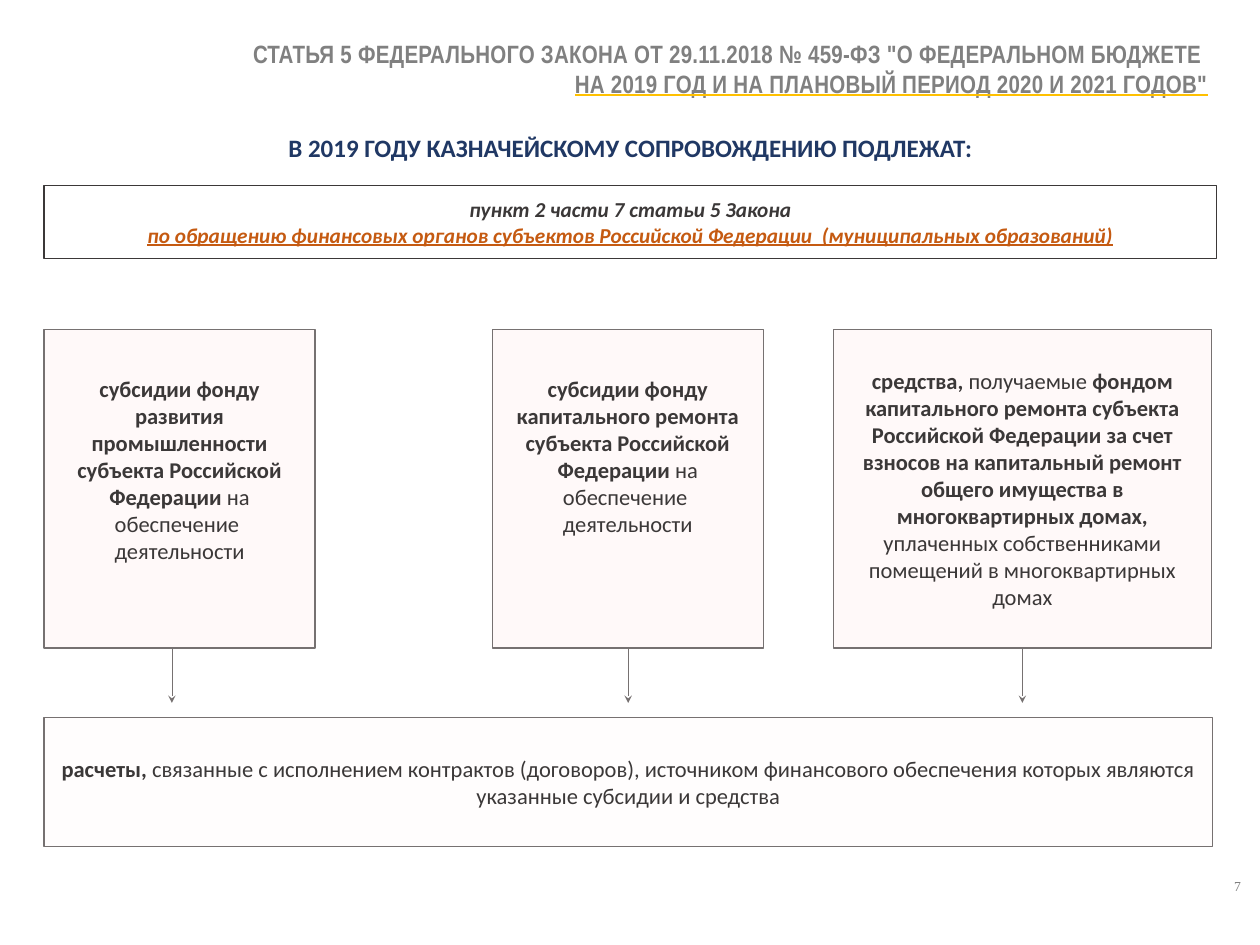
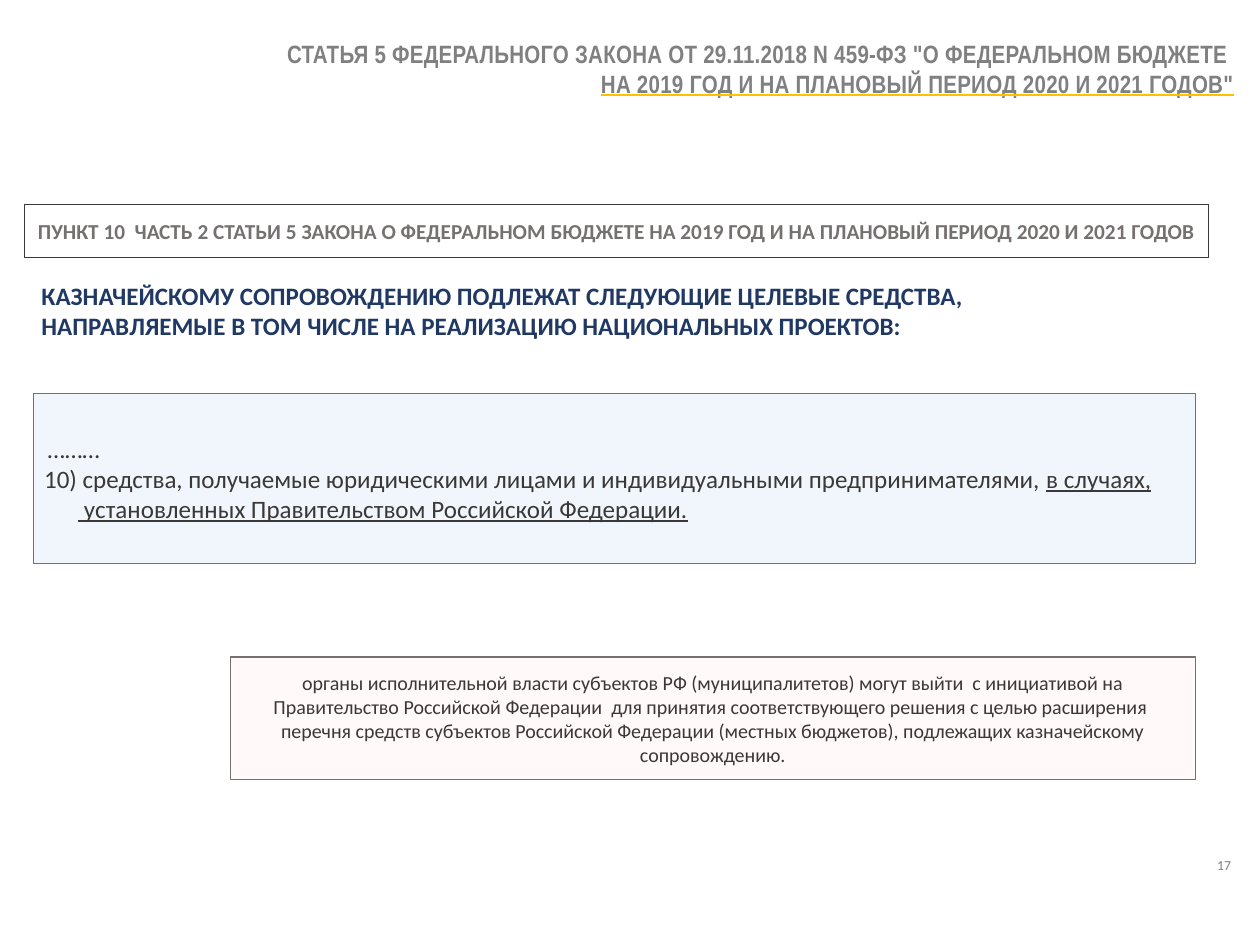
"""Builds two slides on treasury support under the federal budget law."""
import dataclasses

import pptx
import pptx.dml.color
import pptx.enum.shapes
import pptx.enum.text
import pptx.oxml
import pptx.oxml.ns
import pptx.util

ALIGN = pptx.enum.text.PP_ALIGN
ANCHOR = pptx.enum.text.MSO_ANCHOR
Inches = pptx.util.Inches


@dataclasses.dataclass(frozen=True)
class Theme:
    """Colours, fonts and type sizes of the deck."""
    body_font: str = "Calibri"
    title_font: str = "Arial Narrow"
    number_font: str = "Times New Roman"
    dark: str = "3B3838"
    border: str = "767171"
    grey: str = "808080"
    navy: str = "203864"
    orange: str = "C55A11"
    gold: str = "FFC000"
    white: tuple = ("FFFFFF", 92)
    rose: tuple = ("FFEFEF", 33)
    pale_rose: tuple = ("FFEFEF", 12)
    blue: tuple = ("DEEBF7", 44)
    heading: int = 20
    body: int = 18
    reference: int = 17
    note: int = 16
    number: int = 11


THEME = Theme()
SLIDE_WIDTH, SLIDE_HEIGHT = 14, 10.5
LEFT = 0.49
COLUMN_TOP, COLUMN_HEIGHT = 3.66, 3.54
ARROW_TOP, ARROW_BOTTOM = 7.21, 7.81

TITLE = ('СТАТЬЯ 5 ФЕДЕРАЛЬНОГО ЗАКОНА ОТ 29.11.2018 {sign} 459-ФЗ "О ФЕДЕРАЛЬНОМ БЮДЖЕТЕ ',
         'НА 2019 ГОД И НА ПЛАНОВЫЙ ПЕРИОД 2020 И 2021 ГОДОВ"')

SUPPORT_HEADING = "В 2019 ГОДУ КАЗНАЧЕЙСКОМУ СОПРОВОЖДЕНИЮ ПОДЛЕЖАТ:"
SUPPORT_REFERENCE = (
    "пункт 2 части 7 статьи 5 Закона",
    "по обращению финансовых органов субъектов Российской Федерации  (муниципальных образований)",
)
SUBSIDY_PURPOSE = ("на обеспечение  деятельности", "")
FUND_COLUMNS = [
    {"left": LEFT, "width": 3.01, "arrow": 1.91, "top_inset": 0.51,
     "runs": [("субсидии фонду развития промышленности субъекта Российской Федерации ", "b"),
              SUBSIDY_PURPOSE]},
    {"left": 5.47, "width": 3.01, "arrow": 6.98, "top_inset": 0.51,
     "runs": [("субсидии фонду капитального ремонта субъекта Российской Федерации ", "b"),
              SUBSIDY_PURPOSE]},
    {"left": 9.26, "width": 4.2, "arrow": 11.36, "top_inset": None,
     "runs": [("средства, ", "b"), ("получаемые ", ""),
              ("фондом капитального ремонта субъекта Российской Федерации за счет взносов "
               "на капитальный ремонт общего имущества в многоквартирных домах, ", "b"),
              ("уплаченных собственниками помещений в многоквартирных домах", "")]},
]
SETTLEMENTS = [
    ("расчеты, ", "b"),
    ("связанные с исполнением контрактов (договоров), источником финансового обеспечения "
     "которых являются указанные субсидии и средства", ""),
]

CLAUSE_REFERENCE = ("ПУНКТ 10  ЧАСТЬ 2 СТАТЬИ 5 ЗАКОНА О ФЕДЕРАЛЬНОМ БЮДЖЕТЕ "
                    "НА 2019 ГОД И НА ПЛАНОВЫЙ ПЕРИОД 2020 И 2021 ГОДОВ")
CLAUSE_HEADING = ("КАЗНАЧЕЙСКОМУ СОПРОВОЖДЕНИЮ ПОДЛЕЖАТ СЛЕДУЮЩИЕ ЦЕЛЕВЫЕ СРЕДСТВА, "
                  "НАПРАВЛЯЕМЫЕ В ТОМ ЧИСЛЕ НА РЕАЛИЗАЦИЮ НАЦИОНАЛЬНЫХ ПРОЕКТОВ:")
CLAUSE_LINES = [
    (0.04, [("………", "")]),
    (0, [("10) средства, получаемые юридическими лицами и индивидуальными предпринимателями, ", ""),
         ("в случаях,", "u")]),
    (0.38, [(" установленных Правительством Российской Федерации.", "u")]),
]
INITIATIVE = (
    "органы исполнительной власти субъектов РФ (муниципалитетов) могут выйти  с инициативой на "
    "Правительство Российской Федерации  для принятия соответствующего решения с целью расширения  "
    "перечня средств субъектов Российской Федерации (местных бюджетов), подлежащих казначейскому "
    "сопровождению."
)


def rgb(value):
    """Return a colour object for a hex value."""
    return pptx.dml.color.RGBColor.from_string(value)


def add_xml(parent, tag, **attributes):
    """Append a drawing element to a parent element."""
    element = parent.makeelement(pptx.oxml.ns.qn(tag), attributes)
    parent.append(element)
    return element


def prepare_frame(frame, anchor=ANCHOR.TOP, insets=(0.12, 0.06)):
    """Set wrapping, anchor and insets of a text frame."""
    frame.word_wrap = True
    frame.auto_size = pptx.enum.text.MSO_AUTO_SIZE.NONE
    frame.vertical_anchor = anchor
    horizontal, vertical = map(Inches, insets)
    frame.margin_left = frame.margin_right = horizontal
    frame.margin_top = frame.margin_bottom = vertical


def write_line(frame, index, runs, size, colour=THEME.dark, align=ALIGN.CENTER,
               font=THEME.body_font, bold=None, italic=None):
    """Write one paragraph of (text, style letters) runs."""
    paragraph = frame.paragraphs[0] if index == 0 else frame.add_paragraph()
    paragraph.alignment = align
    paragraph.font.name = font
    paragraph.font.size = pptx.util.Pt(size)
    paragraph.font.color.rgb = rgb(colour)
    paragraph.font.bold = bold
    paragraph.font.italic = italic
    for text, style in runs:
        run = paragraph.add_run()
        run.text = text
        if "b" in style:
            run.font.bold = True
        if "u" in style:
            run.font.underline = True
    return paragraph


def add_text(slide, area, text, anchor=ANCHOR.TOP, insets=(0.12, 0.06), **style):
    """Add a text box with one paragraph."""
    frame = slide.shapes.add_textbox(*map(Inches, area)).text_frame
    prepare_frame(frame, anchor, insets)
    write_line(frame, 0, [(text, "")], **style)


def add_box(slide, area, fill, border=THEME.border):
    """Add a bordered, partly transparent box and return its text frame."""
    shape = slide.shapes.add_shape(pptx.enum.shapes.MSO_SHAPE.RECTANGLE, *map(Inches, area))
    shape.shadow.inherit = False
    colour, opacity = fill
    shape.fill.solid()
    shape.fill.fore_color.rgb = rgb(colour)
    colour_element = shape.fill._xPr.find(".//" + pptx.oxml.ns.qn("a:srgbClr"))
    add_xml(colour_element, "a:alpha", val=str(opacity * 1000))
    shape.line.color.rgb = rgb(border)
    shape.line.width = pptx.util.Pt(1)
    prepare_frame(shape.text_frame, ANCHOR.MIDDLE)
    return shape.text_frame


def add_arrow(slide, x):
    """Add a downward arrow below a fund column."""
    ends = map(Inches, (x, ARROW_TOP, x, ARROW_BOTTOM))
    arrow = slide.shapes.add_connector(pptx.enum.shapes.MSO_CONNECTOR.STRAIGHT, *ends)
    arrow.line.color.rgb = rgb(THEME.border)
    arrow.line.width = pptx.util.Pt(0.5)
    add_xml(arrow.line._get_or_add_ln(), "a:tailEnd", type="stealth")
    add_xml(arrow._element.spPr, "a:effectLst")


def add_slide(presentation, title_area, sign, number, number_area, number_font):
    """Add a slide with the shared title and page number."""
    slide = presentation.slides.add_slide(presentation.slide_layouts[5])
    title = slide.shapes.title
    title.left, title.top, title.width, title.height = map(Inches, title_area)
    prepare_frame(title.text_frame)
    for index, (text, style) in enumerate(zip(TITLE, ("", "u"))):
        paragraph = write_line(title.text_frame, index, [(text.format(sign=sign), style)],
                               THEME.heading, THEME.grey, ALIGN.RIGHT, THEME.title_font, True)
        properties = paragraph.runs[0].font._element
        properties.set("spc", "20")
        if style:
            fill = add_xml(add_xml(properties, "a:uFill"), "a:solidFill")
            add_xml(fill, "a:srgbClr", val=THEME.gold)
    add_text(slide, number_area, number, ANCHOR.MIDDLE, size=THEME.number,
             colour=THEME.grey, align=ALIGN.RIGHT, font=number_font)
    return slide


def build_support_slide(presentation):
    """Build the slide on funds under treasury support."""
    slide = add_slide(presentation, (LEFT, 0.37, 13.05, 0.79), "№", "7",
                      (13.45, 9.56, 0.46, 0.56), THEME.number_font)
    add_text(slide, (LEFT, 1.41, 13.03, 0.46), SUPPORT_HEADING,
             size=THEME.heading, colour=THEME.navy, bold=True)
    reference = add_box(slide, (LEFT, 2.06, 13.03, 0.81), THEME.white, THEME.dark)
    for index, (text, colour, style) in enumerate(
            zip(SUPPORT_REFERENCE, (THEME.dark, THEME.orange), ("", "u"))):
        write_line(reference, index, [(text, style)], THEME.reference, colour,
                   bold=True, italic=True)
    for column in FUND_COLUMNS:
        area = (column["left"], COLUMN_TOP, column["width"], COLUMN_HEIGHT)
        frame = add_box(slide, area, THEME.rose)
        if column["top_inset"]:
            frame.vertical_anchor = ANCHOR.TOP
            frame.margin_top = Inches(column["top_inset"])
        write_line(frame, 0, column["runs"], THEME.body)
        add_arrow(slide, column["arrow"])
    settlements = add_box(slide, (LEFT, 7.97, 12.98, 1.44), THEME.pale_rose)
    write_line(settlements, 0, SETTLEMENTS, THEME.body)


def build_clause_slide(presentation):
    """Build the slide on clause 10 and regional initiative."""
    slide = add_slide(presentation, (0.27, 0.37, 13.56, 0.79), "N", "17",
                      (13.34, 9.33, 0.46, 0.56), THEME.body_font)
    reference = add_box(slide, (0.27, 2.27, 13.16, 0.59), THEME.white, THEME.dark)
    write_line(reference, 0, [(CLAUSE_REFERENCE, "")], THEME.reference, THEME.border, bold=True)
    add_text(slide, (0.32, 3.05, 12.31, 0.81), CLAUSE_HEADING, insets=(0.14, 0.07),
             size=THEME.heading, colour=THEME.navy, align=ALIGN.LEFT, bold=True)
    clause = add_box(slide, (0.37, 4.37, 12.91, 1.89), THEME.blue)
    for index, (indent, runs) in enumerate(CLAUSE_LINES):
        paragraph = write_line(clause, index, runs, THEME.heading, align=ALIGN.LEFT)
        paragraph._p.get_or_add_pPr().set("marL", str(Inches(indent)))
    initiative = add_box(slide, (2.56, 7.3, 10.72, 1.36), THEME.rose)
    write_line(initiative, 0, [(INITIATIVE, "")], THEME.note)


def main():
    """Build and save the presentation."""
    presentation = pptx.Presentation()
    presentation.slide_width = Inches(SLIDE_WIDTH)
    presentation.slide_height = Inches(SLIDE_HEIGHT)
    build_support_slide(presentation)
    build_clause_slide(presentation)
    presentation.save("out.pptx")


if __name__ == "__main__":
    main()
